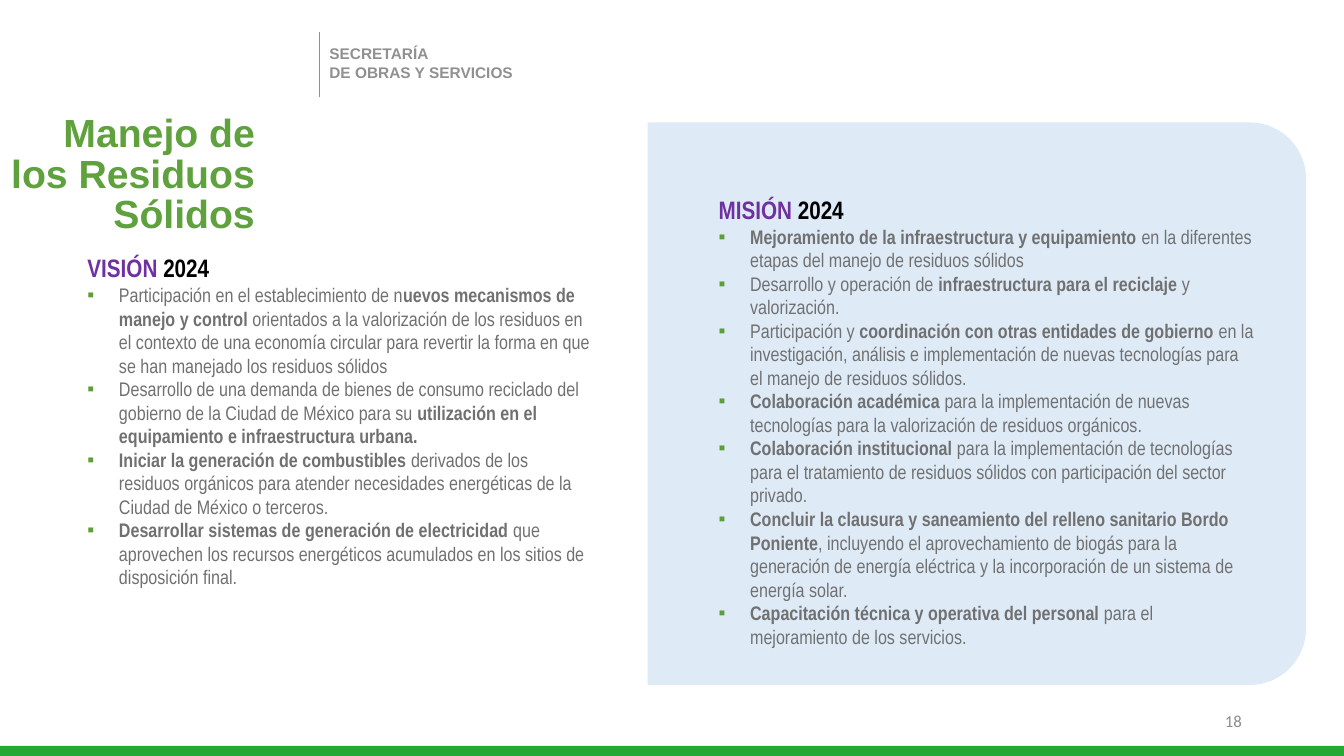
"""Build the slide on the 2024 vision and mission for solid waste management."""
from dataclasses import dataclass

from lxml import etree
from pptx import Presentation
from pptx.dml.color import RGBColor
from pptx.enum import shapes, text
from pptx.oxml import ns
from pptx.util import Pt

GREEN, GRAY = "5C9F39", "707070"
INSET = 7.2
BULLET_LEFT, TEXT_LEFT = 36, 58.5
MSO, ALIGN, ANCHOR = shapes.MSO_SHAPE, text.PP_ALIGN, text.MSO_ANCHOR


@dataclass
class Box:
    left: float
    top: float
    width: float
    height: float

    def lengths(self) -> list:
        return [Pt(v) for v in (self.left, self.top, self.width, self.height)]


@dataclass
class Block:
    shape: MSO
    box: Box
    color: str
    rotation: float = 0
    adjustments: tuple = ()


@dataclass
class Panel:
    box: Box
    heading: str
    bullets: list


BLOCKS = [
    Block(MSO.RECTANGLE, Box(0, 532.8, 960, 7.2), "24A836"),
    Block(MSO.ROUND_2_SAME_RECTANGLE, Box(496.8, 53.2, 401.8, 470.3), "DEEBF7",
          90, (0.1, 0)),
]

PANELS = [
    Panel(Box(19.4, 177, 411.8, 363), "VISIÓN", [
        "Participación en el establecimiento de n*uevos mecanismos de manejo y control* orientados a la "
        "valorización de los residuos en el contexto de una economía circular para revertir la forma en "
        "que se han manejado los residuos sólidos",
        "Desarrollo de una demanda de bienes de consumo reciclado del gobierno de la Ciudad de México "
        "para su *utilización en el equipamiento e infraestructura urbana.*",
        "*Iniciar la generación de combustibles *derivados de los residuos orgánicos para atender "
        "necesidades energéticas de la Ciudad de México o terceros.",
        "*Desarrollar sistemas de generación de electricidad *que aprovechen los recursos energéticos "
        "acumulados en los sitios de disposición final.",
    ]),
    Panel(Box(470.2, 135.2, 432.7, 370), "MISIÓN", [
        "*Mejoramiento de la infraestructura y equipamiento *en la diferentes etapas del manejo de "
        "residuos sólidos",
        "Desarrollo y operación de *infraestructura para el reciclaje *y valorización.",
        "Participación y *coordinación con otras entidades de gobierno *en la investigación, análisis e "
        "implementación de nuevas tecnologías para el manejo de residuos sólidos.",
        "*Colaboración académica *para la implementación de nuevas tecnologías para la valorización de "
        "residuos orgánicos.",
        "*Colaboración institucional *para la implementación de tecnologías para el tratamiento de "
        "residuos sólidos con participación del sector privado.",
        "*Concluir la clausura y saneamiento del relleno sanitario Bordo Poniente*, incluyendo el "
        "aprovechamiento de biogás para la generación de energía eléctrica y la incorporación de un "
        "sistema de energía solar.",
        "*Capacitación técnica y operativa del personal *para el mejoramiento de los servicios.",
    ]),
]


def rgb(color: str) -> RGBColor:
    return RGBColor.from_string(color)


def apply(target, formats: dict) -> None:
    for name, value in formats.items():
        setattr(target, name, value)


def add_run(p, words: str, size: float, font: str, color: str, bold: bool = False) -> None:
    r = p.add_run()
    r.text = words
    apply(r.font, {"size": Pt(size), "name": font, "bold": bold})
    r.font.color.rgb = rgb(color)


def frame(sp, anchor=ANCHOR.TOP):
    tf = sp.text_frame
    apply(tf, {"word_wrap": True, "auto_size": text.MSO_AUTO_SIZE.NONE, "vertical_anchor": anchor,
               "margin_left": Pt(INSET), "margin_right": Pt(INSET),
               "margin_top": Pt(INSET / 2), "margin_bottom": Pt(INSET / 2)})
    return tf


def add_text(s, box: Box, anchor=ANCHOR.TOP):
    return frame(s.shapes.add_textbox(*box.lengths()), anchor)


def add_block(s, block: Block) -> None:
    sp = s.shapes.add_shape(block.shape, *block.box.lengths())
    sp.rotation = block.rotation
    sp.shadow.inherit = False
    sp.fill.solid()
    sp.fill.fore_color.rgb = rgb(block.color)
    sp.line.fill.background()
    for i, value in enumerate(block.adjustments):
        sp.adjustments[i] = value


def indent(p, left: float, first: float = 0) -> None:
    pPr = p._p.get_or_add_pPr()
    pPr.set("marL", str(int(Pt(left))))
    pPr.set("indent", str(int(Pt(first))))


def add_bullet(p, color: str) -> None:
    pPr = p._p.get_or_add_pPr()
    clr = etree.SubElement(pPr, ns.qn("a:buClr"))
    etree.SubElement(clr, ns.qn("a:srgbClr"), val=color)
    etree.SubElement(pPr, ns.qn("a:buFont"), typeface="Arial")
    etree.SubElement(pPr, ns.qn("a:buChar"), char="▪")


def add_panel(s, panel: Panel) -> None:
    tf = add_text(s, panel.box)
    p = tf.paragraphs[0]
    indent(p, BULLET_LEFT)
    add_run(p, panel.heading + " ", 18, "Arial Narrow", "7030A0", True)
    add_run(p, "2024", 18, "Arial Narrow", "000000", True)
    for bullet in panel.bullets:
        p = tf.add_paragraph()
        indent(p, TEXT_LEFT, BULLET_LEFT - TEXT_LEFT)
        add_bullet(p, GREEN)
        for i, words in enumerate(bullet.split("*")):
            if words:
                add_run(p, words, 14, "Arial Narrow", GRAY, i % 2 == 1)


def add_title(s) -> None:
    sp = s.shapes.title
    apply(sp, dict(zip(("left", "top", "width", "height"), Box(-7, 78.5, 196.2, 95).lengths())))
    p = frame(sp).paragraphs[0]
    apply(p, {"alignment": ALIGN.RIGHT, "line_spacing": Pt(29), "space_before": Pt(0)})
    add_run(p, "Manejo de los Residuos Sólidos", 28, "Arial", "5FA13D", True)


def add_department(s) -> None:
    tf = add_text(s, Box(228.2, 28.1, 153.4, 47.5))
    for i, words in enumerate(("SECRETARÍA", "DE OBRAS Y SERVICIOS")):
        p = tf.add_paragraph() if i else tf.paragraphs[0]
        add_run(p, words, 11, "Arial", "90918F", True)
    rule = s.shapes.add_connector(shapes.MSO_CONNECTOR.STRAIGHT, Pt(228.2), Pt(23), Pt(228.2), Pt(69.5))
    rule.line.width = Pt(1)
    rule.line.color.rgb = rgb("90918F")
    etree.SubElement(rule._element.spPr, ns.qn("a:effectLst"))


def add_page_number(s) -> None:
    p = add_text(s, Box(678.2, 500.4, 216, 28.8), ANCHOR.MIDDLE).paragraphs[0]
    p.alignment = ALIGN.RIGHT
    add_run(p, "18", 12, "Calibri", "8C8C8C")


def main() -> None:
    prs = Presentation()
    apply(prs, {"slide_width": Pt(960), "slide_height": Pt(540)})
    s = prs.slides.add_slide(prs.slide_layouts[5])
    add_title(s)
    add_department(s)
    for block in BLOCKS:
        add_block(s, block)
    for panel in PANELS:
        add_panel(s, panel)
    add_page_number(s)
    prs.save("out.pptx")


if __name__ == "__main__":
    main()
